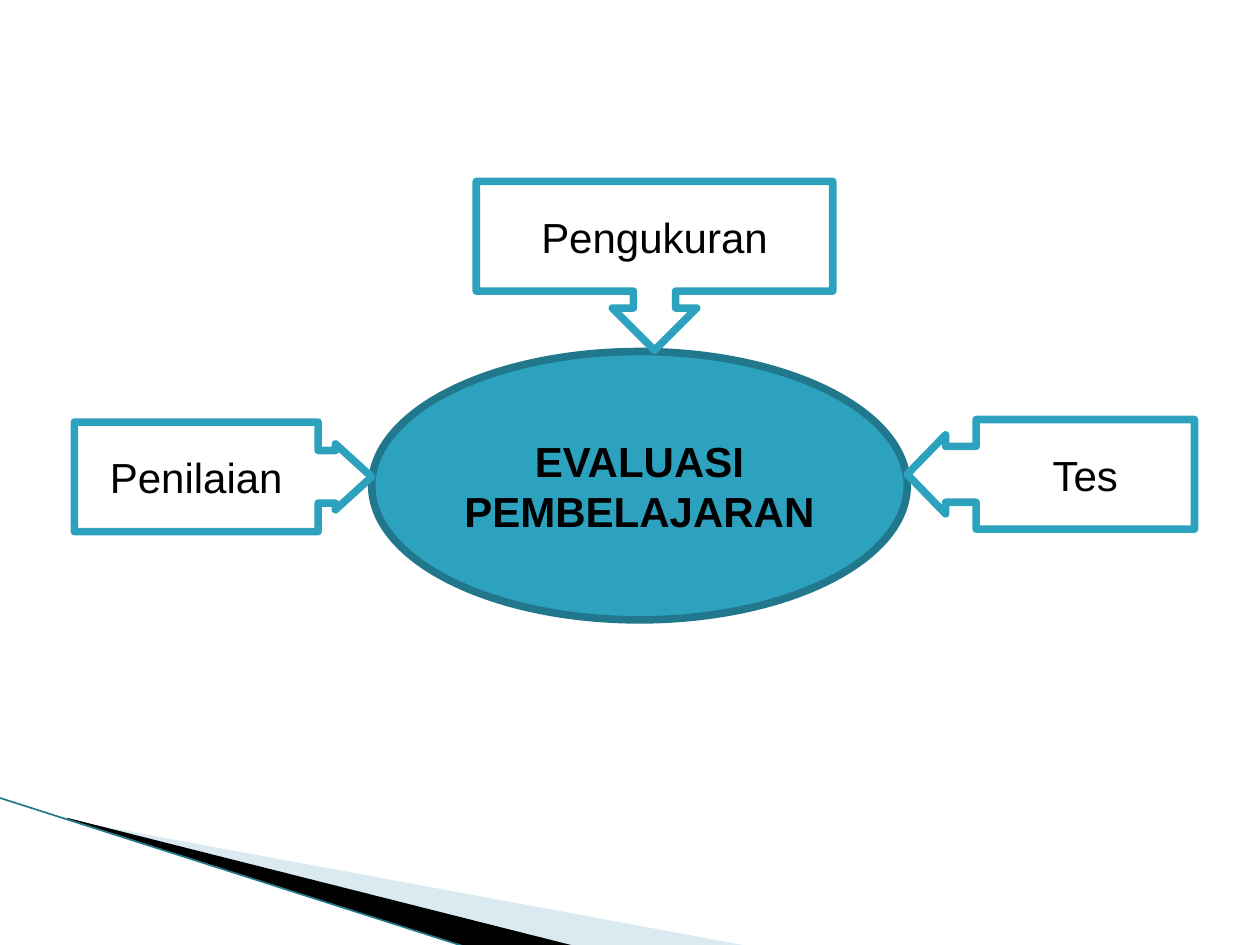
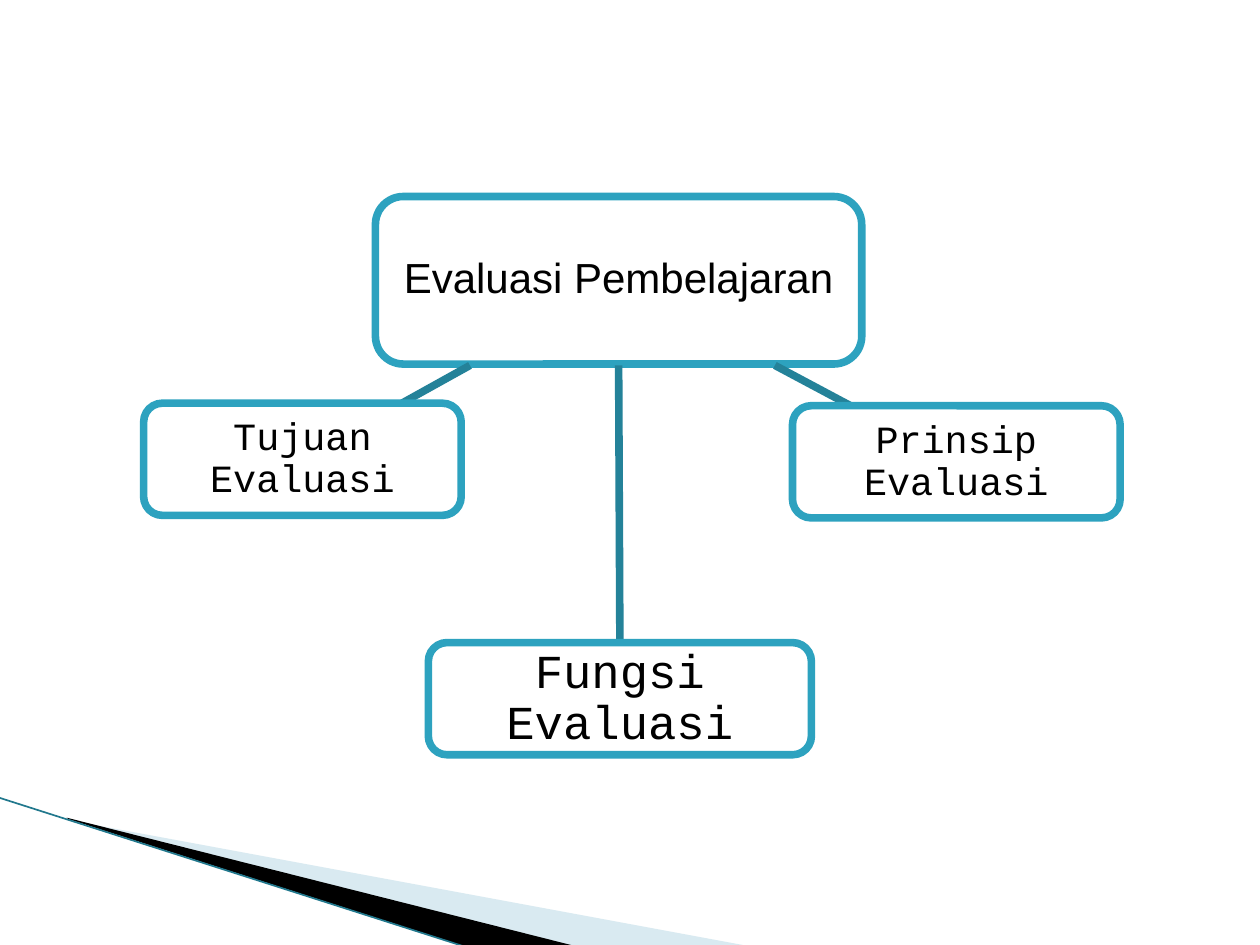
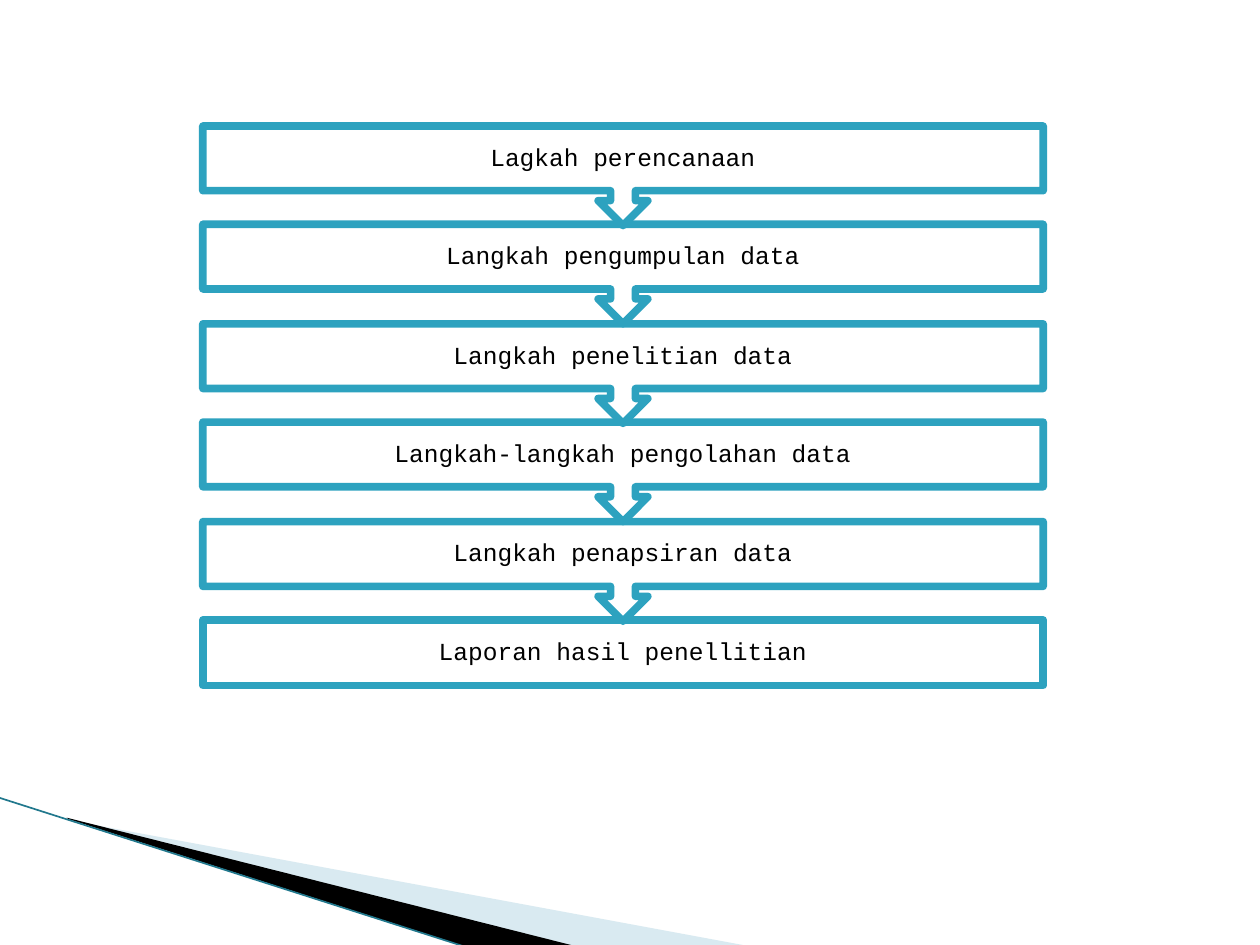
from dataclasses import dataclass

from lxml.etree import SubElement
from pptx import Presentation
from pptx.dml.color import RGBColor
from pptx.enum.shapes import MSO_CONNECTOR, MSO_SHAPE
from pptx.enum.text import MSO_ANCHOR, PP_ALIGN
from pptx.oxml.ns import qn
from pptx.shapes.autoshape import Shape
from pptx.slide import Slide
from pptx.util import Pt

SCALE = 9144
WIDE, HIGH = 1000, 750

TEAL = RGBColor(0x2D, 0xA2, 0xBF)
EDGE = RGBColor(0x21, 0x78, 0x8D)
LINK = RGBColor(0x24, 0x82, 0x99)
PALE = RGBColor(0xA0, 0xCB, 0xDC)
WHITE = RGBColor(0xFF, 0xFF, 0xFF)
BLACK = RGBColor(0x00, 0x00, 0x00)

SANS = "Arial"
MONO = "Courier New"
THICK = 4.33
THIN = 0.95

Point = tuple[int, int]


@dataclass(frozen=True)
class Box:
    text: str
    left: int
    top: int
    width: int
    height: int
    kind: MSO_SHAPE
    size: int = 24
    font: str = SANS
    bold: bool = False
    fill: RGBColor = WHITE
    line: RGBColor = TEAL
    inset: int = 10
    space: float = 1.0
    adjust: tuple[float, ...] = ()


@dataclass(frozen=True)
class Branch:
    start: Point
    end: Point
    box: Box


@dataclass(frozen=True)
class Band:
    points: tuple[Point, ...]
    fill: RGBColor
    alpha: int = 100


BANDS = (
    Band(((55, 651), (595, 751), (456, 751), (55, 650)), PALE, 40),
    Band(((53, 649), (457, 751), (372, 752), (54, 650)), BLACK),
)

CYCLE = (
    Box("EVALUASI PEMBELAJARAN", 295, 279, 425, 213, MSO_SHAPE.OVAL,
        bold=True, fill=TEAL, line=EDGE),
    Box("Pengukuran", 378, 144, 283, 134, MSO_SHAPE.DOWN_ARROW_CALLOUT),
    Box("Penilaian", 59, 335, 236, 87, MSO_SHAPE.RIGHT_ARROW_CALLOUT,
        adjust=(0.48, 0.3, 0.33, 0.82)),
    Box("Tes", 720, 333, 228, 87, MSO_SHAPE.LEFT_ARROW_CALLOUT,
        adjust=(0.51, 0.36, 0.35, 0.76)),
)


def node(text: str, left: int, top: int, width: int, height: int,
         size: int, font: str = MONO, inset: int = 6) -> Box:
    return Box(text, left, top, width, height, MSO_SHAPE.ROUNDED_RECTANGLE,
               size=size, font=font, inset=inset, space=0.9)


ROOT = node("Evaluasi Pembelajaran", 298, 156, 386, 133, 24, SANS, 7)
TREE = (
    Branch((491, 290), (492, 510),
           node("Fungsi Evaluasi", 340, 510, 304, 89, 27, inset=7)),
    Branch((615, 290), (675, 322),
           node("Prinsip Evaluasi", 629, 322, 260, 89, 22)),
    Branch((373, 290), (319, 320),
           node("Tujuan Evaluasi", 114, 320, 252, 89, 22)),
)

STEPS = (
    "Lagkah perencanaan",
    "Langkah pengumpulan data",
    "Langkah penelitian data",
    "Langkah-langkah pengolahan data",
    "Langkah penapsiran data",
    "Laporan hasil penellitian",
)
PITCH = 78.4


def px(value: int) -> int:
    return value * SCALE


def draw_box(slide: Slide, box: Box) -> Shape:
    shape = slide.shapes.add_shape(
        box.kind, px(box.left), px(box.top), px(box.width), px(box.height))
    shape.shadow.inherit = False
    for place, value in enumerate(box.adjust):
        shape.adjustments[place] = value
    shape.fill.solid()
    shape.fill.fore_color.rgb = box.fill
    shape.line.color.rgb = box.line
    shape.line.width = Pt(THICK)

    frame = shape.text_frame
    frame.text = box.text
    frame.word_wrap = True
    frame.vertical_anchor = MSO_ANCHOR.MIDDLE
    frame.margin_left = frame.margin_right = px(box.inset)
    frame.margin_top = frame.margin_bottom = px(min(box.inset, 7))
    text = frame.paragraphs[0]
    text.alignment = PP_ALIGN.CENTER
    text.line_spacing = box.space
    font = text.runs[0].font
    font.name = box.font
    font.size = Pt(box.size)
    font.bold = box.bold
    font.color.rgb = BLACK
    return shape


def draw_line(slide: Slide, start: Point, end: Point,
              color: RGBColor, width: float) -> None:
    line = slide.shapes.add_connector(
        MSO_CONNECTOR.STRAIGHT, *map(px, start + end))
    line.line.color.rgb = color
    line.line.width = Pt(width)
    SubElement(line._element.spPr, qn("a:effectLst"))


def draw_band(slide: Slide, band: Band) -> None:
    first, *rest = band.points
    pen = slide.shapes.build_freeform(*first, scale=SCALE)
    pen.add_line_segments(rest, close=True)
    shape = pen.convert_to_shape()
    shape.shadow.inherit = False
    shape.line.fill.background()
    shape.fill.solid()
    shape.fill.fore_color.rgb = band.fill
    if band.alpha < 100:
        color = shape._element.spPr.find(".//" + qn("a:srgbClr"))
        SubElement(color, qn("a:alpha"), val=str(band.alpha * 1000))


def add_slide(deck: Presentation) -> Slide:
    slide = deck.slides.add_slide(deck.slide_layouts[6])
    for band in BANDS:
        draw_band(slide, band)
    draw_line(slide, (-1, 633), (371, 752), EDGE, THIN)
    return slide


def add_cycle(deck: Presentation) -> None:
    slide = add_slide(deck)
    for box in CYCLE:
        draw_box(slide, box)


def add_tree(deck: Presentation) -> None:
    slide = add_slide(deck)
    draw_box(slide, ROOT)
    for branch in TREE:
        draw_line(slide, branch.start, branch.end, LINK, THICK)
        draw_box(slide, branch.box)


def add_steps(deck: Presentation) -> None:
    slide = add_slide(deck)
    last = len(STEPS) - 1
    for place in range(last, -1, -1):
        kind, height = MSO_SHAPE.DOWN_ARROW_CALLOUT, 79
        if place == last:
            kind, height = MSO_SHAPE.RECTANGLE, 52
        draw_box(slide, Box(
            STEPS[place], 161, 100 + round(place * PITCH), 667, height, kind,
            size=14, font=MONO, inset=11, space=0.9))


def main() -> None:
    deck = Presentation()
    deck.slide_width, deck.slide_height = px(WIDE), px(HIGH)
    add_cycle(deck)
    add_tree(deck)
    add_steps(deck)
    deck.save("out.pptx")


if __name__ == "__main__":
    main()
